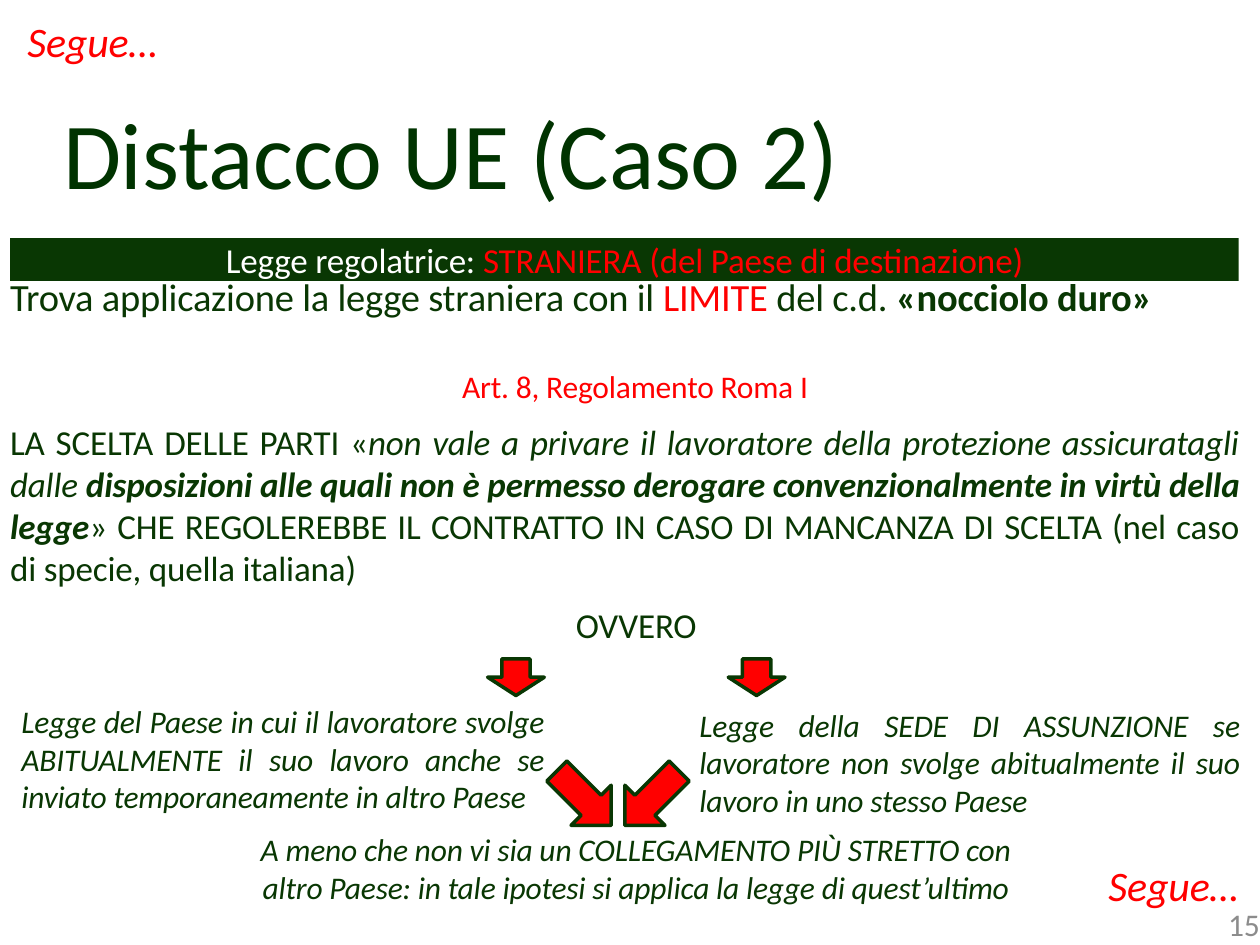
from pptx import Presentation
from pptx.dml.color import RGBColor
from pptx.enum.shapes import MSO_SHAPE
from pptx.enum.text import MSO_ANCHOR, MSO_AUTO_SIZE, PP_ALIGN
from pptx.util import Inches, Pt

RECT, DOWN = MSO_SHAPE.RECTANGLE, MSO_SHAPE.DOWN_ARROW
LEFT, MID, RIGHT, JUST = PP_ALIGN.LEFT, PP_ALIGN.CENTER, PP_ALIGN.RIGHT, PP_ALIGN.JUSTIFY
TOP, GROW = MSO_ANCHOR.TOP, MSO_AUTO_SIZE.SHAPE_TO_FIT_TEXT
GREEN = RGBColor(0x09, 0x37, 0x03)
DARK = RGBColor(0x00, 0x33, 0x00)
RED = RGBColor(0xFF, 0x00, 0x00)
WHITE = RGBColor(0xFF, 0xFF, 0xFF)
GREY = RGBColor(0x8C, 0x8C, 0x8C)

FRAME = {"margin_left": 0, "margin_right": 0, "margin_top": 0, "margin_bottom": 0,
         "word_wrap": True, "vertical_anchor": TOP, "auto_size": GROW}
BOLD, ITAL = {"bold": True}, {"italic": True}
BOTH = {**BOLD, **ITAL}


def add_para(para, align, size, color, runs):
    """Fill a paragraph; each run is its text and a dict of font changes."""
    para.alignment = align
    for text, style in runs:
        run = para.add_run()
        run.text = text
        font = {"name": "Calibri", "size": Pt(size), "bold": False, "italic": False, **style}
        run.font.color.rgb = font.pop("color", color)
        for key, value in font.items():
            setattr(run.font, key, value)
        if color != GREY:
            run._r.get_or_add_rPr().set("spc", "-10")


def set_frame(shape):
    for key, value in FRAME.items():
        setattr(shape.text_frame, key, value)
    return shape.text_frame


prs = Presentation()
prs.slide_width, prs.slide_height = Inches(10), Inches(7.5)
slide = prs.slides.add_slide(prs.slide_layouts[6])
shapes = slide.shapes

# Banner
bar = shapes.add_shape(RECT, Inches(0.08), Inches(1.89), Inches(9.75), Inches(0.34))
bar.shadow.inherit = False
bar.fill.solid()
bar.fill.fore_color.rgb = GREEN
bar.line.fill.background()
add_para(set_frame(bar).paragraphs[0], MID, 20, WHITE, [
    ("Legge regolatrice: ", {}),
    ("STRANIERA (del Paese di destinazione)", {"color": RED})])

# Text boxes: place, then paragraphs of align, size, colour and runs
notes = [
    ((7.7, 7.18, 2.3, 0.3), [(RIGHT, 18, GREY, [("15", {})])]),
    ((0.5, 0.75, 7.55, 0.91), [(JUST, 54, DARK, [("Distacco UE (Caso 2)", {})])]),
    ((0.08, 2.17, 9.92, 1.05), [
        (LEFT, 22, GREEN, [
            ("Trova applicazione la legge straniera con il ", {}),
            ("LIMITE ", {"color": RED}),
            ("del c.d. ", {}),
            ("«nocciolo duro»", BOLD)]),
        (MID, 18, RED, [("Art. 8, Regolamento Roma I", {})])]),
    ((0.08, 3.34, 9.75, 1.34), [(JUST, 20, GREEN, [
        ("LA SCELTA DELLE PARTI «", {}),
        ("non vale a privare il lavoratore della protezione assicuratagli dalle", ITAL),
        (" disposizioni alle quali non è permesso derogare convenzionalmente "
         "in virtù della legge", BOTH),
        ("» CHE REGOLEREBBE IL CONTRATTO IN CASO DI MANCANZA DI SCELTA "
         "(nel caso di specie, quella italiana)", {})])]),
    ((2.8, 4.79, 4.5, 0.34), [(MID, 20, GREEN, [("OVVERO", {})])]),
    ((0.17, 5.57, 4.15, 1.21), [(JUST, 18, GREEN, [
        ("Legge del Paese in cui il lavoratore svolge ABITUALMENTE il suo lavoro "
         "anche se inviato temporaneamente in altro Paese", ITAL)])]),
    ((5.55, 5.6, 4.29, 0.91), [(JUST, 18, GREEN, [
        ("Legge della SEDE DI ASSUNZIONE se lavoratore non svolge abitualmente "
         "il suo lavoro in uno stesso Paese", ITAL)])]),
    ((2.02, 6.59, 6.05, 0.61), [(MID, 18, GREEN, [
        ("A meno che non vi sia un COLLEGAMENTO PIÙ STRETTO con altro Paese: "
         "in tale ipotesi si applica la legge di quest’ultimo", ITAL)])]),
]
for x, y in [(0, 0.12), (8.58, 6.82)]:
    notes.append(((x, y, 1.25, 0.4), [(RIGHT, 24, RED, [("Segue…", ITAL)])]))

for place, paras in notes:
    frame = set_frame(shapes.add_textbox(*map(Inches, place)))
    for i, para in enumerate(paras):
        line = frame.add_paragraph() if i else frame.paragraphs[0]
        if i:
            line.space_before = Pt(27)
        add_para(line, *para)

# Arrows: left, top, height, turn
for x, y, high, turn in [(3.87, 5.23, 0.29, 0), (5.78, 5.23, 0.29, 0),
                         (4.41, 6.03, 0.61, 315), (4.95, 6.03, 0.61, 45)]:
    arrow = shapes.add_shape(DOWN, Inches(x), Inches(y), Inches(0.45), Inches(high))
    arrow.rotation = turn
    arrow.shadow.inherit = False
    arrow.fill.solid()
    arrow.fill.fore_color.rgb = RED
    arrow.line.color.rgb = GREEN
    arrow.line.width = Pt(2)

prs.save("out.pptx")
